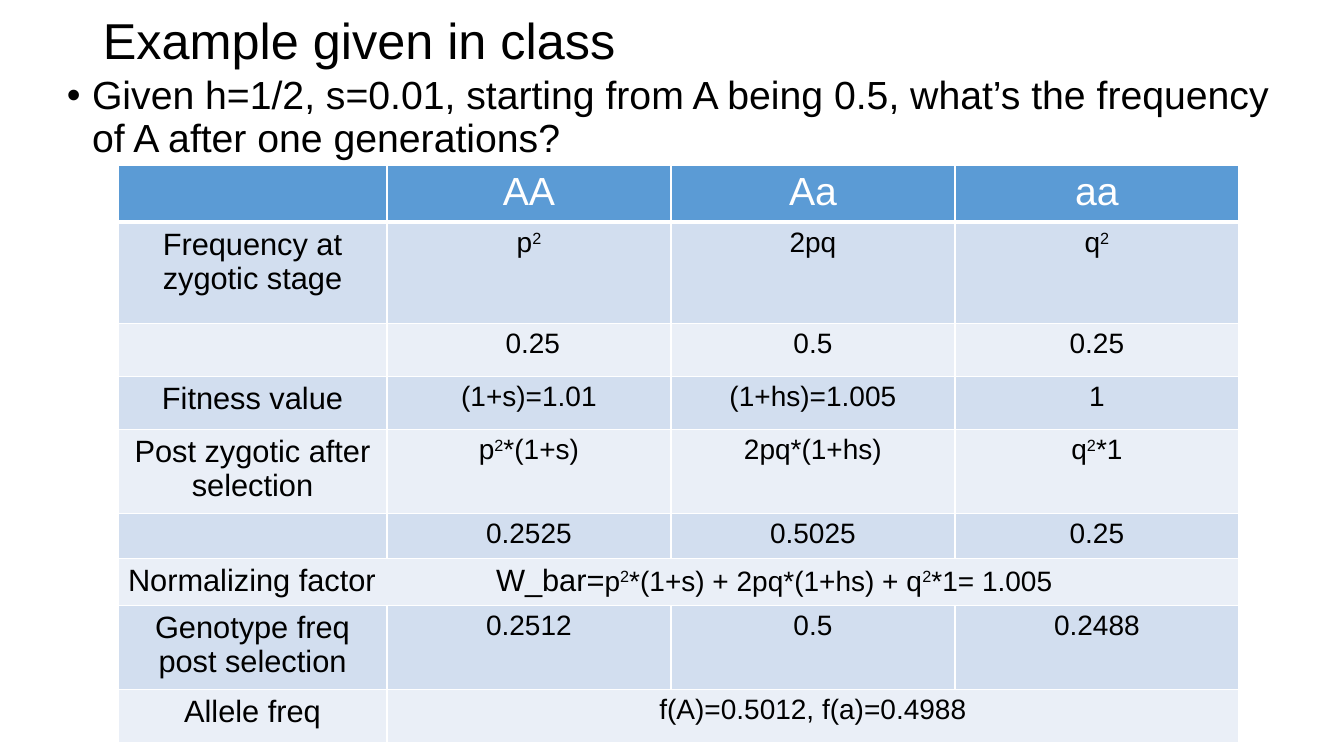
import pptx
import pptx.dml.color
import pptx.enum.text
import pptx.oxml.ns
import pptx.util
from lxml import etree

PX = 914400 / 100.8
FONT = "Arial"
COLORS = {
    "text": "000000", "header_text": "FFFFFF", "border": "FFFFFF",
    "header": "5B9BD5", "dark_band": "D2DEEF", "light_band": "EAEFF7",
}

TITLE = "Example given in class"
QUESTION = ("Given h=1/2, s=0.01, starting from A being 0.5, "
            "what’s the frequency of A after one generations?")
TITLE_BOX = (93, -30, 1159, 146)
QUESTION_BOX = (57, 71, 1245, 95)

# "^" raises the character that follows it
ROWS = [
    ("", "AA", "Aa", "aa"),
    ("Frequency at zygotic stage", "p^2", "2pq", "q^2"),
    ("", " 0.25", "0.5", "0.25"),
    ("Fitness value", "(1+s)=1.01", "(1+hs)=1.005", "1"),
    ("Post zygotic after selection", "p^2*(1+s)", "2pq*(1+hs)", "q^2*1"),
    ("", "0.2525", "0.5025", "0.25"),
    ("Normalizing factor\tW_bar=",),
    ("Genotype freq post selection", "0.2512", "0.5", "0.2488"),
    ("Allele freq", "f(A)=0.5012, f(a)=0.4988"),
]
MEAN_FITNESS = "p^2*(1+s) + 2pq*(1+hs) + q^2*1= 1.005"
MEAN_FITNESS_ROW = 6
MEAN_FITNESS_TAB = 368
TABLE_LEFT, TABLE_TOP = 118, 165
COLUMN_WIDTHS = [269, 284, 284, 284]
ROW_HEIGHTS = [53, 101, 53, 53, 79, 45, 44, 79, 53]
HEADER_SIZE, LABEL_SIZE, VALUE_SIZE = 28, 22, 20


def emu(pixels):
    return round(pixels * PX)


def add_run(paragraph, text, size, color="text", raised=False):
    run = paragraph.add_run()
    run.text = text
    run.font.name = FONT
    run.font.size = pptx.util.Pt(size)
    run.font.color.rgb = pptx.dml.color.RGBColor.from_string(COLORS[color])
    if raised:
        run.font._element.set("baseline", "30000")


def add_formula(paragraph, formula, size, color="text"):
    """Add text in which each character after "^" is superscript."""
    first, *others = formula.split("^")
    if first:
        add_run(paragraph, first, size, color)
    for part in others:
        add_run(paragraph, part[0], size, color, raised=True)
        if part[1:]:
            add_run(paragraph, part[1:], size, color)


def add_child(parent, tag, **attributes):
    return etree.SubElement(parent, pptx.oxml.ns.qn(tag), **attributes)


def add_text(slide, box, text, size):
    shape = slide.shapes.add_textbox(*map(emu, box))
    shape.text_frame.word_wrap = True
    paragraph = shape.text_frame.paragraphs[0]
    paragraph.line_spacing = 0.9
    add_run(paragraph, text, size)
    return shape.text_frame


def style_cell(cell, fill, bottom_width):
    properties = cell._tc.get_or_add_tcPr()
    for side, width in (("L", 1), ("R", 1), ("T", 1), ("B", bottom_width)):
        line = add_child(properties, f"a:ln{side}", w=str(pptx.util.Pt(width)))
        add_child(add_child(line, "a:solidFill"), "a:srgbClr", val=COLORS["border"])
    cell.fill.solid()
    cell.fill.fore_color.rgb = pptx.dml.color.RGBColor.from_string(COLORS[fill])


def add_fitness_table(slide):
    table = slide.shapes.add_table(
        len(ROWS), len(COLUMN_WIDTHS), emu(TABLE_LEFT), emu(TABLE_TOP),
        emu(sum(COLUMN_WIDTHS)), emu(sum(ROW_HEIGHTS))).table
    table.first_row = table.horz_banding = False
    for column, width in zip(table.columns, COLUMN_WIDTHS):
        column.width = emu(width)
    last = len(COLUMN_WIDTHS) - 1

    for r, texts in enumerate(ROWS):
        table.rows[r].height = emu(ROW_HEIGHTS[r])
        if len(texts) <= last:
            table.cell(r, len(texts) - 1).merge(table.cell(r, last))
        fill = "header" if r == 0 else "dark_band" if r % 2 else "light_band"
        for c, text in enumerate(texts):
            cell = table.cell(r, c)
            style_cell(cell, fill, 3 if r == 0 else 1)
            size = HEADER_SIZE if r == 0 else VALUE_SIZE if c else LABEL_SIZE
            paragraph = cell.text_frame.paragraphs[0]
            if r != MEAN_FITNESS_ROW:
                paragraph.alignment = pptx.enum.text.PP_ALIGN.CENTER
            add_formula(paragraph, text, size, "text" if r else "header_text")

    paragraph = table.cell(MEAN_FITNESS_ROW, 0).text_frame.paragraphs[0]
    tabs = add_child(paragraph._p.get_or_add_pPr(), "a:tabLst")
    add_child(tabs, "a:tab", pos=str(emu(MEAN_FITNESS_TAB)), algn="l")
    add_formula(paragraph, MEAN_FITNESS, VALUE_SIZE)


def main():
    presentation = pptx.Presentation()
    presentation.slide_width = emu(1344)
    presentation.slide_height = emu(756)
    slide = presentation.slides.add_slide(presentation.slide_layouts[6])

    title = add_text(slide, TITLE_BOX, TITLE, 36)
    title.vertical_anchor = pptx.enum.text.MSO_ANCHOR.MIDDLE

    paragraph = add_text(slide, QUESTION_BOX, QUESTION, 28).paragraphs[0]
    paragraph.space_before = pptx.util.Pt(10)
    bullet = paragraph._p.get_or_add_pPr()
    bullet.set("marL", str(pptx.util.Inches(0.25)))
    bullet.set("indent", str(pptx.util.Inches(-0.25)))
    add_child(bullet, "a:buFont", typeface=FONT)
    add_child(bullet, "a:buChar", char="•")

    add_fitness_table(slide)
    presentation.save("out.pptx")


if __name__ == "__main__":
    main()
